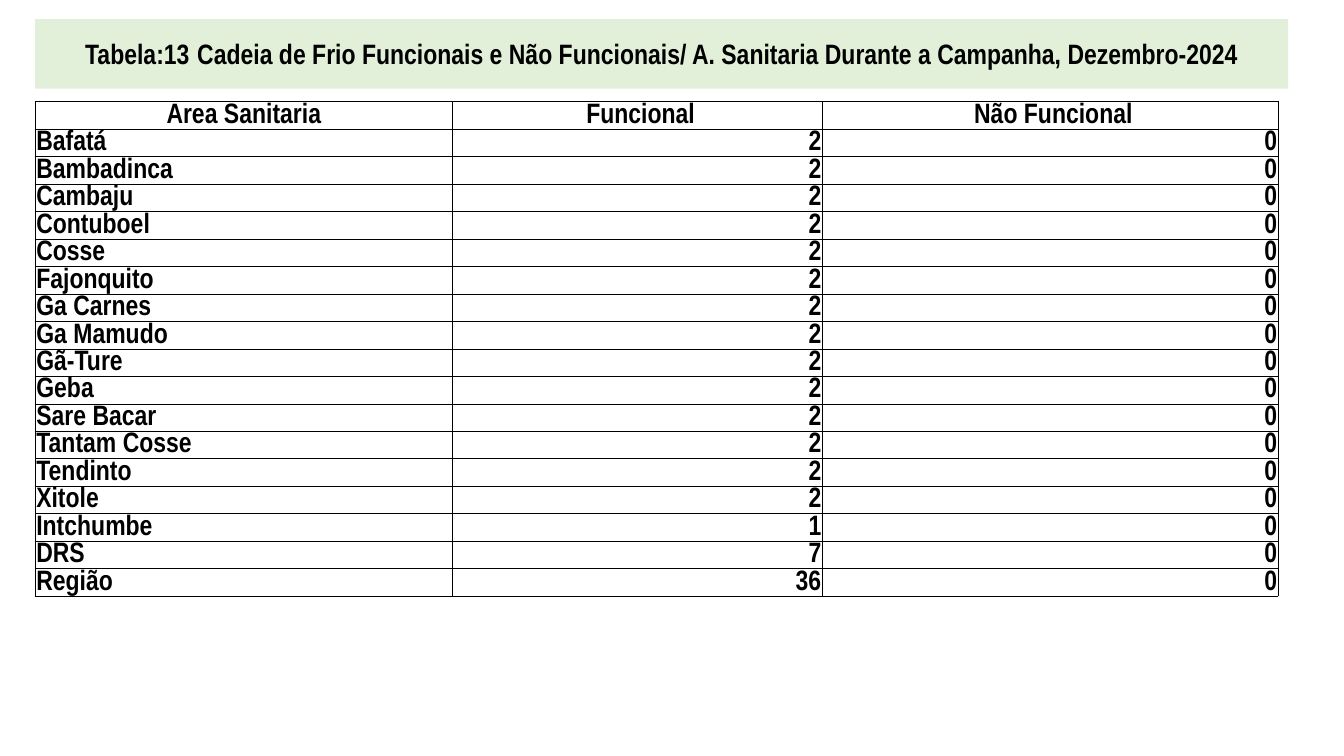
from lxml import etree
from pptx import Presentation
from pptx.dml.color import RGBColor
from pptx.enum import shapes, text
from pptx.oxml import ns
from pptx.util import Pt

# Content
TITLE = [
    ("Tabela:13", 20),
    (" ", 24),
    ("Cadeia de Frio Funcionais e Não Funcionais/ A. Sanitaria Durante a Campanha, Dezembro-2024", 20),
]
HEADER = ("Area Sanitaria", " Funcional", " Não Funcional")
AREAS = [
    ("Bafatá", 2, 0),
    ("Bambadinca", 2, 0),
    ("Cambaju", 2, 0),
    ("Contuboel", 2, 0),
    ("Cosse", 2, 0),
    ("Fajonquito", 2, 0),
    ("Ga Carnes", 2, 0),
    ("Ga Mamudo", 2, 0),
    ("Gã-Ture", 2, 0),
    ("Geba", 2, 0),
    ("Sare Bacar", 2, 0),
    ("Tantam Cosse", 2, 0),
    ("Tendinto", 2, 0),
    ("Xitole", 2, 0),
]
SUMMARY = [("Intchumbe", 1, 0), ("DRS", 7, 0), ("Região", 36, 0)]
ROWS = [HEADER] + AREAS + SUMMARY

# Format
FONT = "Arial Narrow"
BLACK = RGBColor(0x00, 0x00, 0x00)
WHITE = RGBColor(0xFF, 0xFF, 0xFF)
GREEN = RGBColor(0xE2, 0xF0, 0xD9)
LEFT = 25.2
COL_WIDTHS = (298, 264.2, 325.6)
TALL_ROW, AREA_ROW = 18, 16.56
TABLE_HEIGHT = 445
INSET = 0.75
LEFT_AL, CENTER, RIGHT = text.PP_ALIGN.LEFT, text.PP_ALIGN.CENTER, text.PP_ALIGN.RIGHT
MIDDLE, BOTTOM = text.MSO_ANCHOR.MIDDLE, text.MSO_ANCHOR.BOTTOM


def add_text(p, words, size=20, align=LEFT_AL, bold=True, color=BLACK):
    p.alignment = align
    r = p.add_run()
    r.text = words
    r.font.name, r.font.size, r.font.bold = FONT, Pt(size), bold
    r.font.color.rgb = color


def add_borders(cell, width=0.5):
    tc_pr = cell._tc.get_or_add_tcPr()
    for side in ("lnL", "lnR", "lnT", "lnB"):
        ln = etree.SubElement(tc_pr, ns.qn(f"a:{side}"), w=str(Pt(width)))
        fill = etree.SubElement(ln, ns.qn("a:solidFill"))
        etree.SubElement(fill, ns.qn("a:srgbClr"), val=str(BLACK))


prs = Presentation()
prs.slide_width, prs.slide_height = Pt(960), Pt(540)
s = prs.slides.add_slide(prs.slide_layouts[6])

# Title band
sp = s.shapes.add_shape(shapes.MSO_SHAPE.RECTANGLE, Pt(LEFT), Pt(13.7), Pt(895), Pt(49.7))
sp.shadow.inherit = False
sp.fill.solid()
sp.fill.fore_color.rgb = GREEN
sp.line.fill.background()
tf = sp.text_frame
tf.word_wrap = True
tf.vertical_anchor = MIDDLE
p = tf.paragraphs[0]
p.line_spacing = 0.9
for words, size in TITLE:
    add_text(p, words, size=size, align=CENTER)

# Table frame
frame = s.shapes.add_table(len(ROWS), len(HEADER), Pt(LEFT), Pt(72.7),
                           Pt(sum(COL_WIDTHS)), Pt(TABLE_HEIGHT))
table = frame.table
table.first_row = table.horz_banding = False
for column, width in zip(table.columns, COL_WIDTHS):
    column.width = Pt(width)

# Table cells
for i, values in enumerate(ROWS):
    is_header = i == 0
    is_summary = i > len(AREAS)
    table.rows[i].height = Pt(TALL_ROW if is_header or is_summary else AREA_ROW)
    for j, value in enumerate(values):
        cell = table.cell(i, j)
        cell.margin_left = cell.margin_right = cell.margin_top = Pt(INSET)
        cell.margin_bottom = Pt(0)
        is_area_name = j == 0 and not is_header and not is_summary
        cell.vertical_anchor = MIDDLE if is_area_name else BOTTOM
        add_borders(cell)
        if is_summary:
            cell.fill.solid()
            cell.fill.fore_color.rgb = WHITE
        else:
            cell.fill.background()
        align = CENTER if is_header else RIGHT if j else LEFT_AL
        add_text(cell.text_frame.paragraphs[0], str(value), align=align)
frame.height = Pt(TABLE_HEIGHT)

prs.save("out.pptx")
